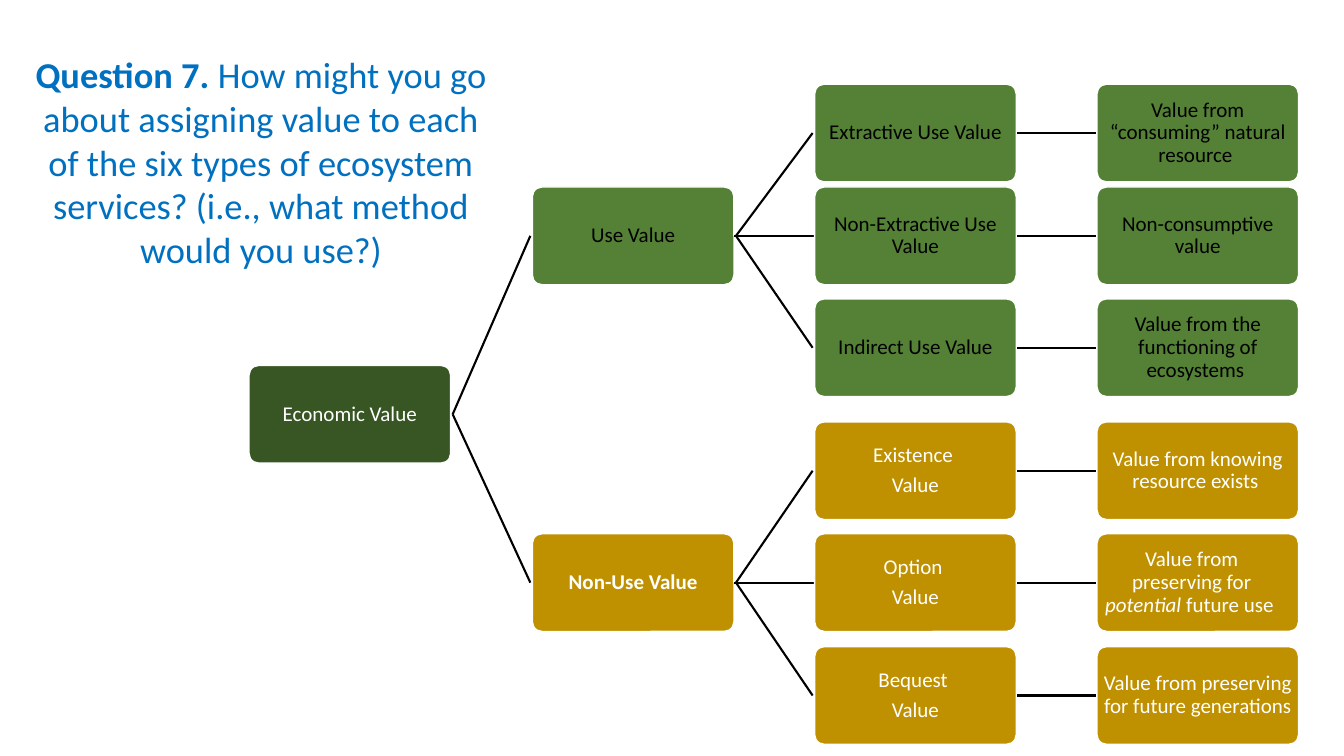
from lxml import etree
from pptx import Presentation
from pptx.dml.color import RGBColor
from pptx.enum.shapes import MSO_CONNECTOR, MSO_SHAPE
from pptx.enum.text import MSO_ANCHOR, PP_ALIGN
from pptx.oxml.ns import qn
from pptx.util import Inches, Pt

COLORS = {
    "root": "385623",
    "use": "548135",
    "non_use": "BF9000",
    "dark": "000000",
    "light": "FFFFFF",
    "question": "0070C0",
}
BOX_WIDTH, BOX_HEIGHT = 2, 0.97
COLUMN_LEFTS = [2.47 + 2.8 * column + 0.01 * (column > 0) for column in range(4)]

presentation = Presentation()
presentation.slide_width = Inches(13.33)
presentation.slide_height = Inches(7.5)
slide = presentation.slides.add_slide(presentation.slide_layouts[6])


def add_box(column, center, fill, text_color, paragraphs):
    """Each paragraph is a list of (text, style) runs."""
    shape = slide.shapes.add_shape(
        MSO_SHAPE.ROUNDED_RECTANGLE,
        Inches(COLUMN_LEFTS[column]), Inches(center - BOX_HEIGHT / 2),
        Inches(BOX_WIDTH), Inches(BOX_HEIGHT))
    shape.adjustments[0] = 0.1
    shape.shadow.inherit = False
    shape.fill.solid()
    shape.fill.fore_color.rgb = RGBColor.from_string(COLORS[fill])
    shape.line.color.rgb = RGBColor.from_string(COLORS["light"])
    shape.line.width = Pt(1)
    text_frame = shape.text_frame
    text_frame.word_wrap = True
    text_frame.vertical_anchor = MSO_ANCHOR.MIDDLE
    text_frame.margin_left = text_frame.margin_right = Inches(0.01)
    text_frame.margin_top = text_frame.margin_bottom = Inches(0.01)
    for index, runs in enumerate(paragraphs):
        paragraph = text_frame.paragraphs[0] if index == 0 else text_frame.add_paragraph()
        paragraph.alignment = PP_ALIGN.CENTER
        paragraph.line_spacing = 0.9
        paragraph.space_before = Pt(5.2 if index else 0)
        for text, style in runs:
            run = paragraph.add_run()
            run.text = text
            run.font.name = "Calibri"
            run.font.size = Pt(15)
            run.font.bold = style == "bold"
            run.font.italic = style == "italic"
            run.font.color.rgb = RGBColor.from_string(COLORS[text_color])
    return shape


def add_link(column, start_center, end_center):
    """Join a box in this column to one in the next."""
    inset = 0 if start_center == end_center else 0.02
    connector = slide.shapes.add_connector(
        MSO_CONNECTOR.STRAIGHT,
        Inches(COLUMN_LEFTS[column] + BOX_WIDTH + inset), Inches(start_center),
        Inches(COLUMN_LEFTS[column + 1] - inset), Inches(end_center))
    connector.line.color.rgb = RGBColor.from_string(COLORS["dark"])
    connector.line.width = Pt(1.5)
    etree.SubElement(connector._element.spPr, qn("a:effectLst"))


# Root of the tree
ROOT_CENTER = 4.11
add_box(0, ROOT_CENTER, "root", "light", [[("Economic Value", "")]])

# Branches: title, style, center, fill, text color, leaves (center, name lines, meaning)
branches = [
    ("Use Value", "", 2.34, "use", "dark", [
        (1.32, ["Extractive Use Value"],
         [("Value from “consuming” natural resource ", "")]),
        (2.34, ["Non-Extractive Use Value"],
         [("Non-consumptive value", "")]),
        (3.45, ["Indirect Use Value"],
         [("Value from the functioning of ecosystems ", "")]),
    ]),
    ("Non-Use Value", "bold", 5.78, "non_use", "light", [
        (4.67, ["Existence ", "Value"],
         [("Value from knowing resource exists ", "")]),
        (5.78, ["Option ", "Value"],
         [("Value from preserving for ", ""), ("potential ", "italic"), ("future use ", "")]),
        (6.9, ["Bequest ", "Value"],
         [("Value from preserving for future generations", "")]),
    ]),
]
for title, style, branch_center, fill, text_color, leaves in branches:
    add_link(0, ROOT_CENTER, branch_center)
    add_box(1, branch_center, fill, text_color, [[(title, style)]])
    for leaf_center, name_lines, meaning in leaves:
        add_link(1, branch_center, leaf_center)
        add_link(2, leaf_center, leaf_center)
        add_box(2, leaf_center, fill, text_color, [[(line, "")] for line in name_lines])
        meaning_box = add_box(3, leaf_center, fill, text_color, [meaning])
        if len(meaning) > 1:
            meaning_box.text_frame.margin_right = Inches(0.13)

# Question
question_box = slide.shapes.add_textbox(Inches(0.23), Inches(0.47), Inches(4.72), Inches(2.29))
question_box.text_frame.word_wrap = True
paragraph = question_box.text_frame.paragraphs[0]
paragraph.alignment = PP_ALIGN.CENTER
question_runs = [
    ("Question 7. ", True),
    ("How might you go about assigning value to each of the six types of "
     "ecosystem services? (i.e., what method would you use?)", False),
]
for text, bold in question_runs:
    run = paragraph.add_run()
    run.text = text
    run.font.name = "Calibri"
    run.font.size = Pt(26)
    run.font.bold = bold
    run.font.color.rgb = RGBColor.from_string(COLORS["question"])

presentation.save("out.pptx")
